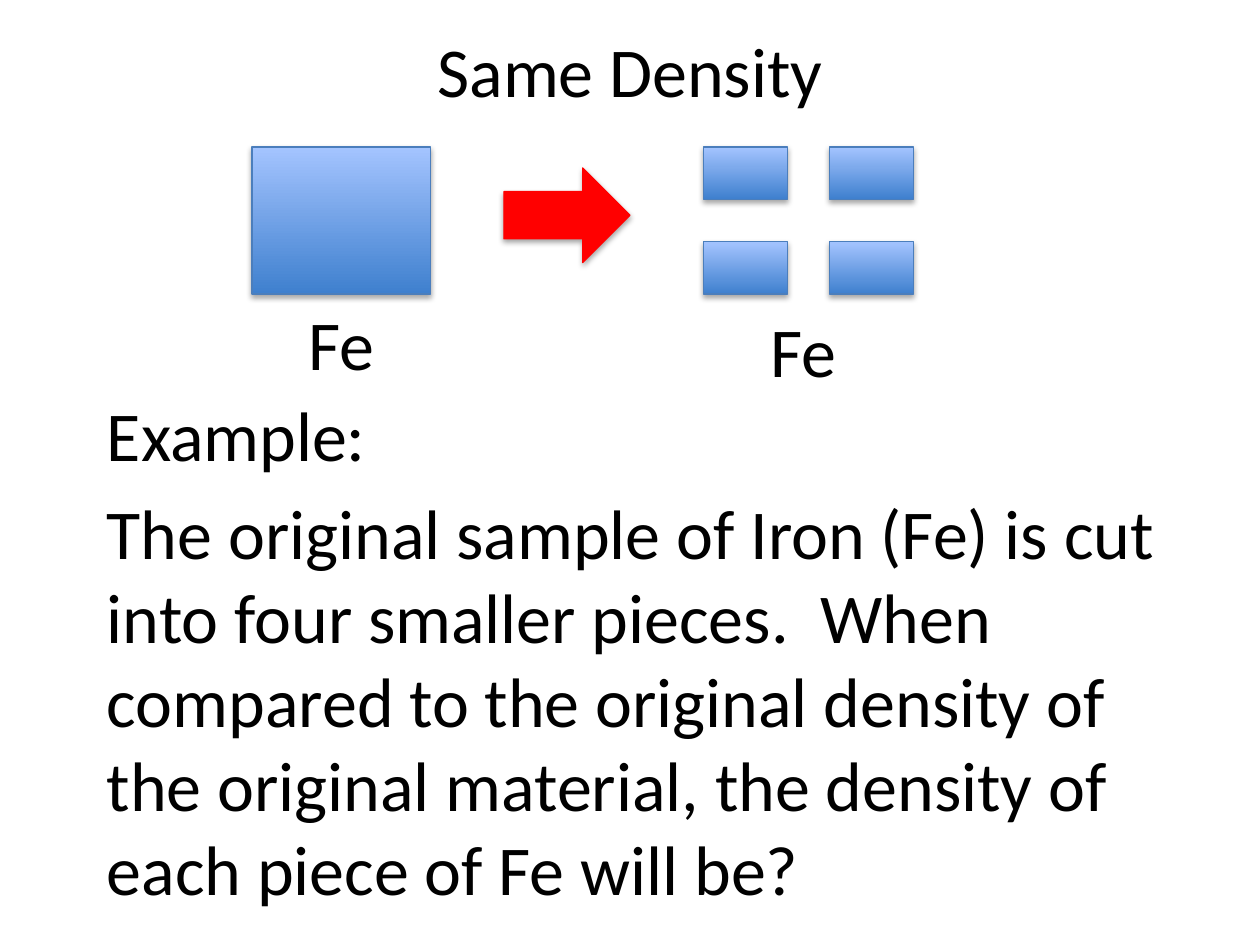
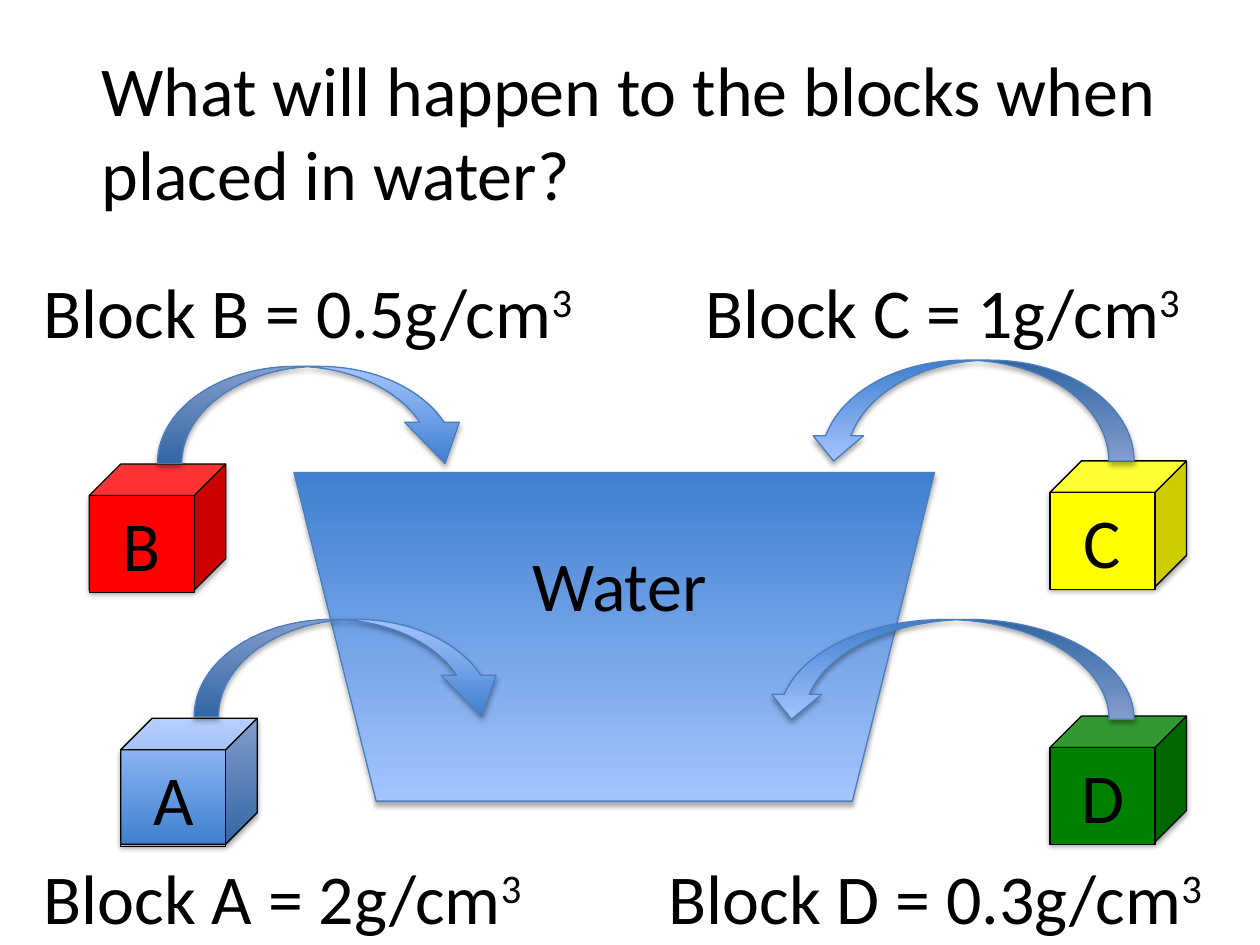
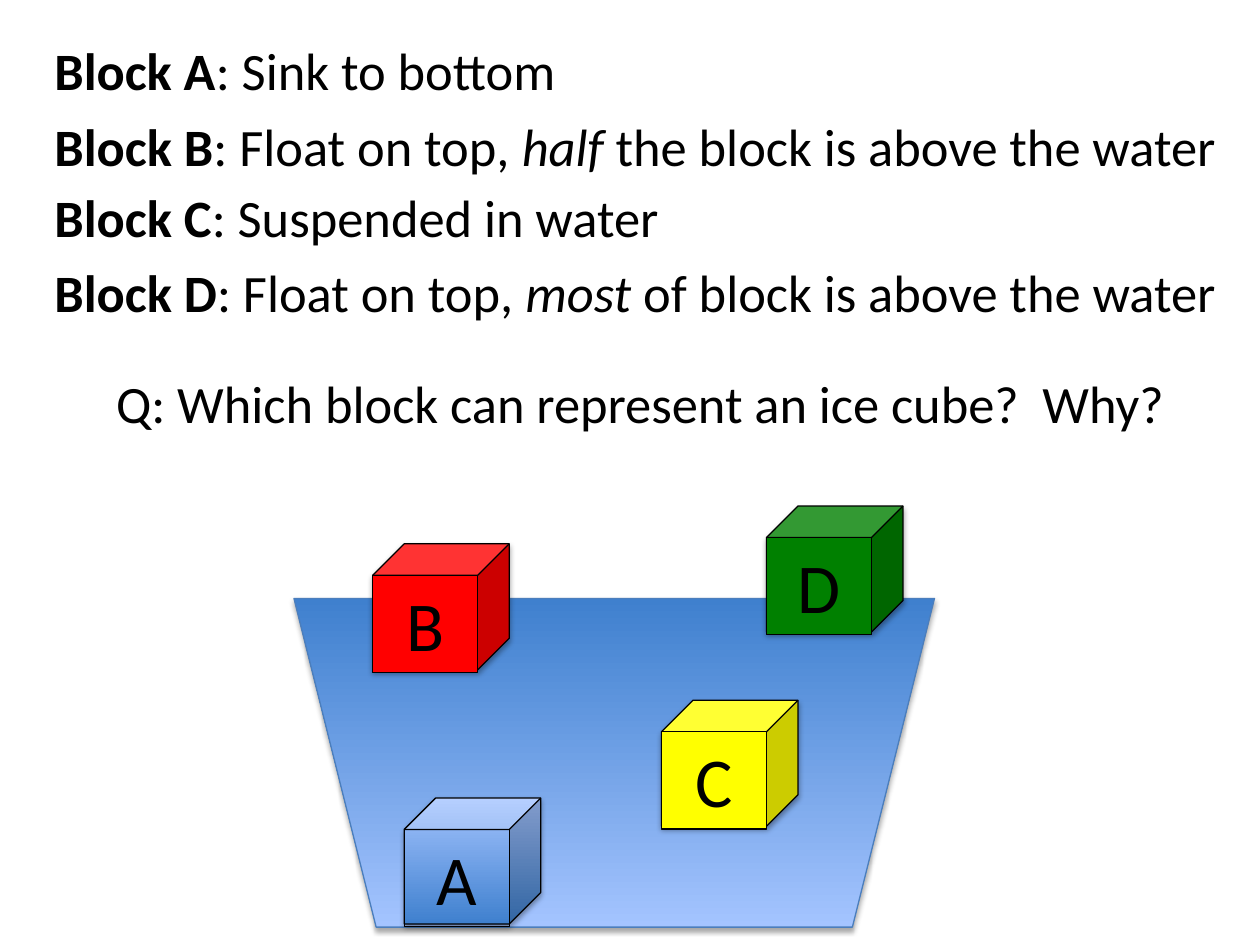
from lxml.etree import SubElement
from pptx import Presentation
from pptx.dml.color import RGBColor
from pptx.enum.shapes import MSO_SHAPE as Preset
from pptx.enum.text import MSO_ANCHOR as Anchor, MSO_AUTO_SIZE as AutoSize, PP_ALIGN as Align
from pptx.oxml.ns import qn
from pptx.util import Inches, Pt

WIDTH, HEIGHT = Inches(10), Inches(7.5)
COLUMNS, ROWS = 120, 90
FONT = "Calibri"
BLACK, RED = "000000", "FF0000"
WATER = ("3F80CE", "A4C4FF")
WATER_EDGE = "4B7EBC"
LARGE, MEDIUM = 40, 30
LINE_ROWS = {LARGE: 9.25, MEDIUM: 7.3}
BLOCK_FILLS = {"A": WATER, "B": RED, "C": "FFFF00", "D": "008000"}


def color(value):
    return RGBColor.from_string(value)


def place(column, row, columns, rows):
    return (
        round(WIDTH * column / COLUMNS),
        round(HEIGHT * row / ROWS),
        round(WIDTH * columns / COLUMNS),
        round(HEIGHT * rows / ROWS),
    )


def paint(part, fill, edge):
    if isinstance(fill, tuple):
        part.fill.gradient()
        part.fill.gradient_angle = 90
        for stop, shade in zip(part.fill.gradient_stops, fill):
            stop.color.rgb = color(shade)
    else:
        part.fill.solid()
        part.fill.fore_color.rgb = color(fill)
    outline(part, edge)


def outline(part, edge):
    part.line.color.rgb = color(edge)
    part.line.width = Pt(0.75)


def cast_shadow(part):
    part.shadow.inherit = False
    effects = part._element.spPr.find(qn("a:effectLst"))
    shadow = SubElement(effects, qn("a:outerShdw"), blurRad="40000", dist="23000",
                        dir="5400000", rotWithShape="0")
    shade = SubElement(shadow, qn("a:srgbClr"), val=BLACK)
    SubElement(shade, qn("a:alpha"), val="35000")


def add_solid(shapes, preset, box, fill=WATER, edge=WATER_EDGE, turn=0, bends=()):
    solid = shapes.add_shape(preset, *place(*box))
    paint(solid, fill, edge)
    cast_shadow(solid)
    solid.rotation = turn
    for index, bend in enumerate(bends):
        solid.adjustments[index] = bend
    return solid


def add_words(shapes, column, row, columns, *runs, size=LARGE, lines=1, align=Align.LEFT):
    words = shapes.add_textbox(*place(column, row, columns, LINE_ROWS[size] * lines))
    frame = words.text_frame
    frame.word_wrap = True
    frame.auto_size = AutoSize.SHAPE_TO_FIT_TEXT
    frame.vertical_anchor = Anchor.TOP
    paragraph = frame.paragraphs[0]
    paragraph.alignment = align
    paragraph.font.name = FONT
    paragraph.font.size = Pt(size)
    paragraph.font.color.rgb = color(BLACK)
    for text, style in runs:
        run = paragraph.add_run()
        run.text = text
        if style == "bold":
            run.font.bold = True
        elif style == "italic":
            run.font.italic = True
        elif style == "raised":
            run.font._element.set("baseline", "30000")
    return words


def add_block(slide, letter, column, row):
    fill = BLOCK_FILLS[letter]
    block = slide.shapes.add_group_shape().shapes
    add_solid(block, Preset.CUBE, (column, row, 13, 12), fill, BLACK)
    face = add_words(block, column, row + 3, 10, (letter, None), align=Align.CENTER)
    if fill == WATER:
        outline(face, BLACK)
    else:
        paint(face, fill, BLACK)


def add_tank(slide, row):
    add_solid(slide.shapes, Preset.TRAPEZOID, (28, row, 61, 31.3), turn=180)


def build_same_density(slide):
    shapes = slide.shapes
    add_words(shapes, 9, 36.7, 104, ("Example:", None))
    add_words(shapes, 9, 46, 104, (
        "The original sample of Iron (Fe) is cut into four smaller pieces.  "
        "When compared to the original density of the original material, "
        "the density of each piece of Fe will be?", None), lines=4.5)
    add_solid(shapes, Preset.RECTANGLE, (24, 14, 17, 14))
    add_solid(shapes, Preset.RIGHT_ARROW, (48, 16, 12, 9), RED, RED)
    for column in (67, 79):
        for row in (14, 23):
            add_solid(shapes, Preset.RECTANGLE, (column, row, 8, 5))
    add_words(shapes, 8, 2, 104, ("Same Density", None), align=Align.CENTER)
    for column, row in ((24, 28), (68, 28.7)):
        add_words(shapes, column, row, 17, ("Fe", None), align=Align.CENTER)


def build_prediction(slide):
    shapes = slide.shapes
    add_tank(slide, 45)
    add_words(shapes, 8.5, 3.8, 108,
              ("What will happen to the blocks when placed in water?", None), lines=1.88)
    for letter, column, row in (("A", 11.5, 68.4), ("B", 8.5, 44.2),
                                ("C", 100, 43.9), ("D", 100, 68.2)):
        add_block(slide, letter, column, row)
    for letter, density, column, row, columns in (
            ("A", "2", 3, 80.75, 53), ("B", "0.5", 3, 25, 53),
            ("C", "1", 66, 25, 53), ("D", "0.3", 62.5, 80.75, 56.5)):
        add_words(shapes, column, row, columns,
                  (f"Block {letter} = {density}g/cm", None), ("3", "raised"))
    for column, row in ((18.5, 59), (15, 34.9)):
        add_solid(shapes, Preset.CURVED_DOWN_ARROW, (column, row, 30, 9.25),
                  bends=(0.25, 0.565, 0.425))
    for box in ((77, 34.3, 31, 9.6), (73, 59, 35, 9.5)):
        add_solid(shapes, Preset.CURVED_UP_ARROW, box, turn=180)
    add_words(shapes, 45, 51, 28, ("Water", None), align=Align.CENTER)


def build_result(slide):
    shapes = slide.shapes
    add_tank(slide, 57)
    for letter, column, row in (("A", 38.5, 76), ("B", 35.5, 51.8),
                                ("C", 63, 66.7), ("D", 73, 48.2)):
        add_block(slide, letter, column, row)
    answers = (
        ("A", 3, 109, [(": Sink to bottom", None)]),
        ("B", 10.3, 116, [(": Float on top, ", None), ("half ", "italic"),
                          ("the block is above the water", None)]),
        ("C", 17, 106, [(": Suspended in water", None)]),
        ("D", 24.2, 116, [(": Float on top, ", None), ("most ", "italic"),
                          ("of block is above the water", None)]),
    )
    for letter, row, columns, answer in answers:
        add_words(shapes, 4, row, columns, (f"Block {letter}", "bold"), *answer, size=MEDIUM)
    add_words(shapes, 5, 34.7, 112,
              ("Q: Which block can represent an ice cube?  Why?", None),
              size=MEDIUM, align=Align.CENTER)


def main():
    deck = Presentation()
    deck.slide_width, deck.slide_height = WIDTH, HEIGHT
    for build in (build_same_density, build_prediction, build_result):
        build(deck.slides.add_slide(deck.slide_layouts[6]))
    deck.save("out.pptx")


if __name__ == "__main__":
    main()
